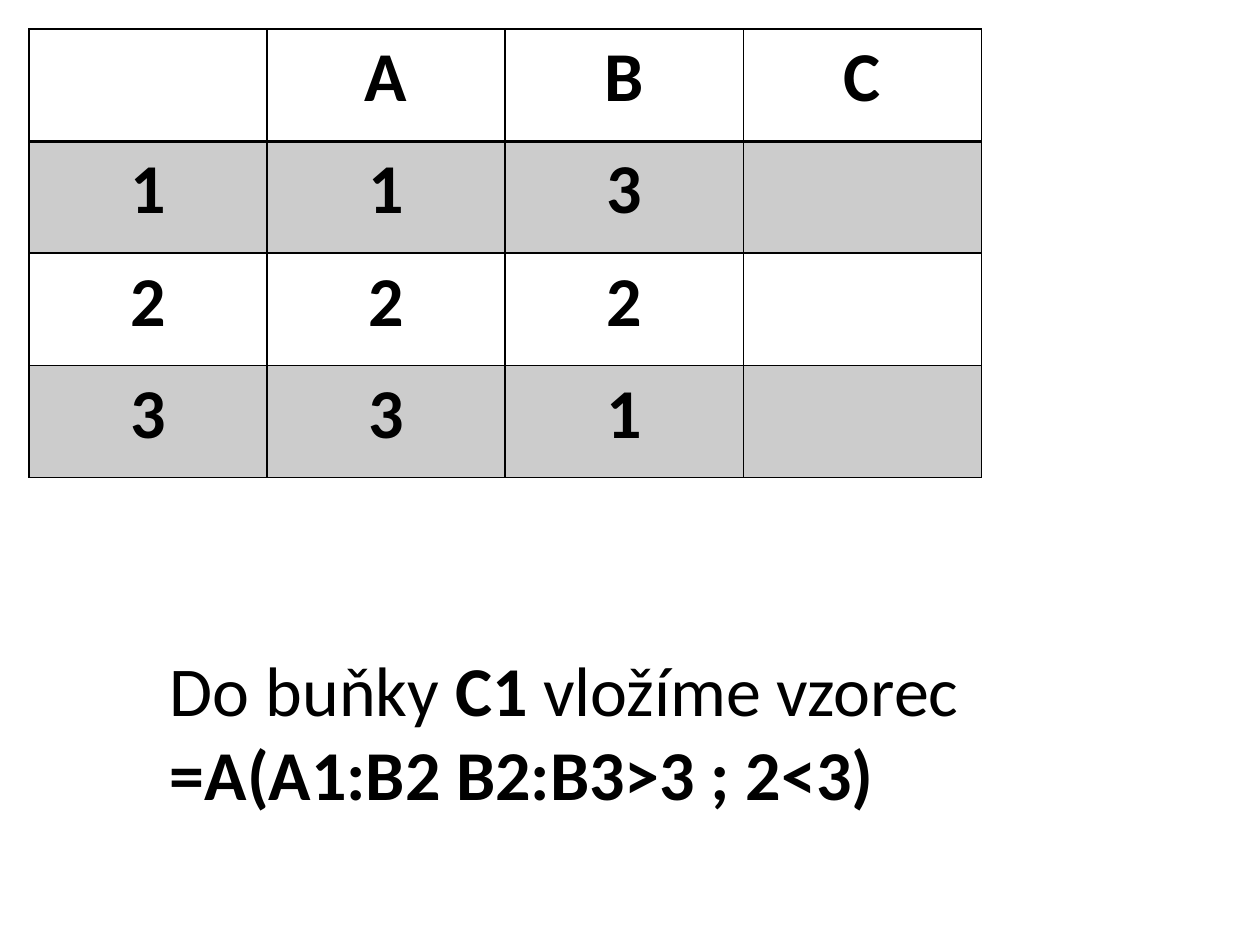
from lxml import etree
from pptx import Presentation
from pptx.dml.color import RGBColor
from pptx.enum.text import MSO_AUTO_SIZE, PP_ALIGN
from pptx.oxml.ns import qn
from pptx.util import Inches, Pt

CENTER, LEFT = PP_ALIGN.CENTER, PP_ALIGN.LEFT

# Content
SHEET = [
    ["", "A", "B", "C"],
    ["1", "1", "3", ""],
    ["2", "2", "2", ""],
    ["3", "3", "1", ""],
]
FORMULA_NOTE = [
    ("Do buňky ", False),
    ("C1 ", True),
    ("vložíme vzorec ", False),
    ("=A(A1:B2 B2:B3>3 ; 2<3)", True),
]

# Theme and layout
THEME = {"font": "Calibri", "size": 40, "ink": "000000", "band_alpha": 20,
         "border": 1, "header_border": 2}
SLIDE_WIDTH, SLIDE_HEIGHT = 10, 7.5
MARGIN, COLUMN_WIDTH, ROW_HEIGHT = 0.23, 1.89, 0.89
NOTE_BOX = (SLIDE_WIDTH / 8, 5.08, 7.89, 1.45)
INK = RGBColor.from_string(THEME["ink"])


def write_text(text_frame, runs, align=LEFT):
    paragraph = text_frame.paragraphs[0]
    paragraph.alignment = align
    for text, bold in runs:
        run = paragraph.add_run()
        run.text = text
        font = run.font
        font.name, font.size, font.bold = THEME["font"], Pt(THEME["size"]), bold
        font.color.rgb = INK


def draw_borders(cell, **widths):
    properties = cell._tc.get_or_add_tcPr()
    for side, width in widths.items():
        line = etree.SubElement(properties, qn(f"a:ln{side}"), w=str(Pt(width)))
        fill = etree.SubElement(line, qn("a:solidFill"))
        etree.SubElement(fill, qn("a:srgbClr"), val=THEME["ink"])


def fill_cell(cell, banded):
    if not banded:
        cell.fill.background()
        return
    cell.fill.solid()
    cell.fill.fore_color.rgb = INK
    color = cell._tc.tcPr.find(qn("a:solidFill")).find(qn("a:srgbClr"))
    etree.SubElement(color, qn("a:alpha"), val=str(THEME["band_alpha"] * 1000))


def add_sheet(slide):
    rows, columns = len(SHEET), len(SHEET[0])
    table = slide.shapes.add_table(
        rows, columns, Inches(MARGIN), Inches(MARGIN),
        Inches(columns * COLUMN_WIDTH), Inches(rows * ROW_HEIGHT)).table
    table.first_row = table.horz_banding = False
    thin, thick = THEME["border"], THEME["header_border"]
    for row, values in enumerate(SHEET):
        for column, value in enumerate(values):
            cell = table.cell(row, column)
            if value:
                write_text(cell.text_frame, [(value, True)], align=CENTER)
            draw_borders(cell, L=thin, R=thin,
                         T=thick if row == 1 else thin,
                         B=thick if row == 0 else thin)
            fill_cell(cell, banded=row % 2 == 1)


def add_note(slide):
    text_frame = slide.shapes.add_textbox(*map(Inches, NOTE_BOX)).text_frame
    text_frame.word_wrap = True
    text_frame.auto_size = MSO_AUTO_SIZE.SHAPE_TO_FIT_TEXT
    write_text(text_frame, FORMULA_NOTE)


def main():
    presentation = Presentation()
    presentation.slide_width = Inches(SLIDE_WIDTH)
    presentation.slide_height = Inches(SLIDE_HEIGHT)
    slide = presentation.slides.add_slide(presentation.slide_layouts[6])
    add_sheet(slide)
    add_note(slide)
    presentation.save("out.pptx")


if __name__ == "__main__":
    main()
